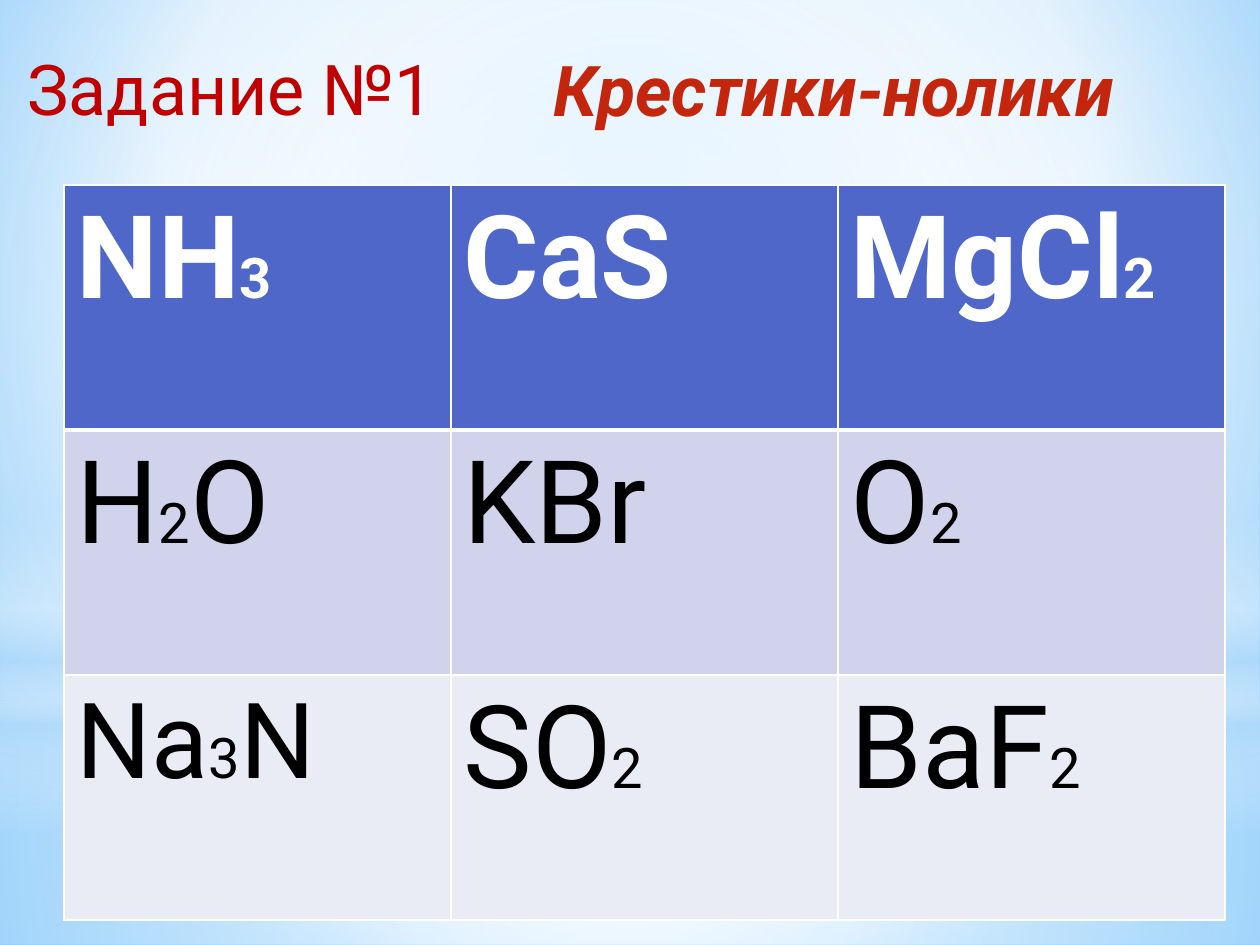
from itertools import groupby

from lxml.etree import SubElement
from pptx import Presentation
from pptx.dml.color import RGBColor
from pptx.enum.shapes import MSO_SHAPE as Shape
from pptx.oxml.ns import qn
from pptx.util import Emu, Pt

PX = 914400 / 126
WIDTH, HEIGHT = 1260, 945
CENTRE = (50, 50, 50, 50)

BACKDROP = [(0, "9ED5FF"), (60, "FFFFFF"), (100, "5BB9FF")]
FLOOR = [(0, "FFFFFF", 91), (37, "FFFFFF", 76), (100, "B4DCFA", 79)]
SKY = [(0, "FFFFFF", 89), (48, "FFFFFF", 62), (100, "B4DCFA", 79)]
HORIZON = [(0, "FFFFFF", 0), (29, "FFFFFF", 30), (45, "B4DCFA", 40),
           (55, "FFFFFF", 26), (65, "B4DCFA", 60), (100, "FFFFFF", 0)]
GLOW = [(0, "FFFFFF"), (56, "FFFFFF", 0)]

FORMULAS = [["NH3", "CaS", "MgCl2"],
            ["H2O", "KBr", "O2"],
            ["Na3N", "SO2", "BaF2"]]
ROW_FILLS = ["4E67C8", "D0D3EB", "E9EBF5"]
FORMULA_SIZE, INDEX_SIZE = 66, 32
SPECIAL_SIZES = {"Na3N": 60}


def emu(*lengths):
    return [Emu(round(length * PX)) for length in lengths]


def colour(value):
    return RGBColor.from_string(value)


def add_node(parent, tag, **attributes):
    return SubElement(parent, qn(tag), {k: str(v) for k, v in attributes.items()})


class SlideBuilder:
    font = "Roboto"

    def __init__(self, deck):
        self.page = deck.slides.add_slide(deck.slide_layouts[6])

    def gradient(self, owner, element, stops, focus=None):
        """Fill with a gradient: circular around focus, or vertical without it."""
        owner.fill.solid()
        solid = element.xpath(".//a:solidFill")[0]
        grad = add_node(solid.getparent(), "a:gradFill", rotWithShape=1)
        solid.getparent().replace(solid, grad)
        stop_list = add_node(grad, "a:gsLst")
        for position, value, *alpha in stops:
            stop = add_node(stop_list, "a:gs", pos=position * 1000)
            tint = add_node(stop, "a:srgbClr", val=value)
            if alpha:
                add_node(tint, "a:alpha", val=alpha[0] * 1000)
        if focus:
            circle = add_node(grad, "a:path", path="circle")
            sides = {side: share * 1000 for side, share in zip("ltrb", focus)}
            add_node(circle, "a:fillToRect", **sides)
        else:
            add_node(grad, "a:lin", ang=90 * 60000, scaled=0)

    def background(self, stops, focus):
        self.gradient(self.page.background, self.page.element, stops, focus)

    def band(self, kind, top, height, stops, focus=None):
        """Add a shape as wide as the slide."""
        shape = self.page.shapes.add_shape(kind, *emu(0, top, WIDTH, height))
        shape.shadow.inherit = False
        shape.line.fill.background()
        self.gradient(shape, shape.element, stops, focus)

    def span(self, para, text, size, value, **formats):
        span = para.add_run()
        span.text = text
        span.font.color.rgb = colour(value)
        for name, setting in {"name": self.font, "size": Pt(size), **formats}.items():
            setattr(span.font, name, setting)

    def text(self, left, top, width, height, text, value, **formats):
        box = self.page.shapes.add_textbox(*emu(left, top, width, height))
        box.text_frame.word_wrap = True
        self.span(box.text_frame.paragraphs[0], text, 40, value, **formats)

    def borders(self, cell, widths):
        props = cell._tc.get_or_add_tcPr()
        for side, width in widths.items():
            line = add_node(props, f"a:ln{side}", w=Pt(width))
            add_node(add_node(line, "a:solidFill"), "a:srgbClr", val="FFFFFF")

    def formula(self, cell, text, header):
        """Write a chemical formula with its digits small."""
        value = "FFFFFF" if header else "000000"
        size = SPECIAL_SIZES.get(text, FORMULA_SIZE)
        for is_index, letters in groupby(text, str.isdigit):
            self.span(cell.text_frame.paragraphs[0], "".join(letters),
                      INDEX_SIZE if is_index else size, value, bold=header)

    def table(self, left, top, width, height, rows):
        frame = self.page.shapes.add_table(len(rows), len(rows[0]),
                                           *emu(left, top, width, height))
        for r, formulas in enumerate(rows):
            for c, text in enumerate(formulas):
                cell = frame.table.cell(r, c)
                self.borders(cell, {"L": 1, "R": 1, "T": 3 if r == 1 else 1,
                                    "B": 3 if r == 0 else 1})
                cell.fill.solid()
                cell.fill.fore_color.rgb = colour(ROW_FILLS[r])
                self.formula(cell, text, header=r == 0)


def main():
    deck = Presentation()
    deck.slide_width, deck.slide_height = emu(WIDTH, HEIGHT)
    slide = SlideBuilder(deck)

    slide.background(BACKDROP, (20, 10, 20, 60))
    slide.band(Shape.RECTANGLE, 703, 242, FLOOR, CENTRE)
    slide.band(Shape.RECTANGLE, 0, 703, SKY, CENTRE)
    slide.band(Shape.RECTANGLE, 519, 315, HORIZON)
    slide.band(Shape.OVAL, 220, 703, GLOW, CENTRE)

    slide.table(64, 185, 1161, 735, FORMULAS)
    slide.text(541, 40, 655, 97, "Крестики-нолики", "C3260C", bold=True, italic=True)
    slide.text(15, 39, 466, 97, "Задание №1", "C00000")

    deck.save("out.pptx")


if __name__ == "__main__":
    main()
